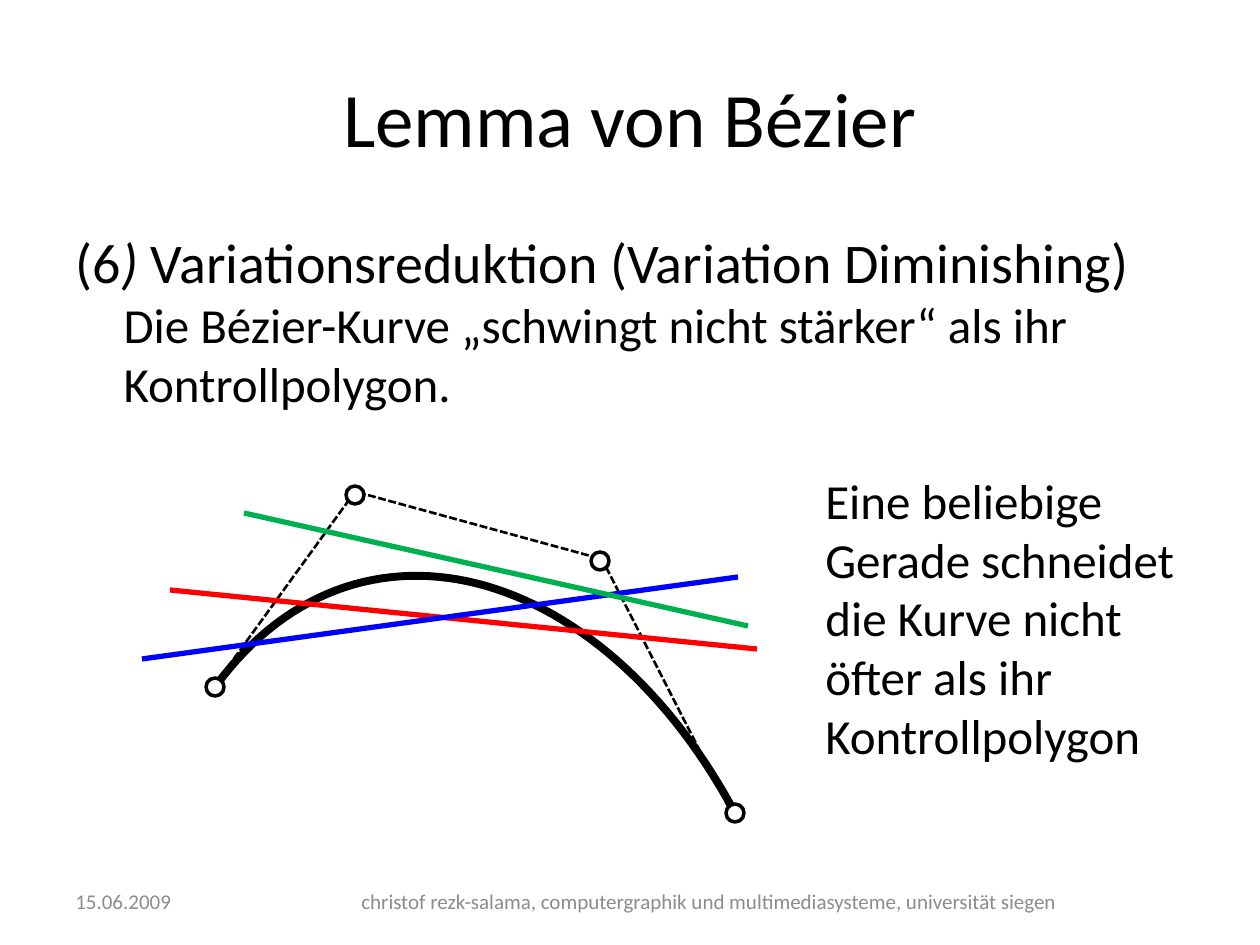
from lxml.etree import SubElement
from pptx import Presentation
from pptx.dml.color import RGBColor
from pptx.enum.dml import MSO_LINE_DASH_STYLE as Dash
from pptx.enum.shapes import MSO_CONNECTOR as Connector, MSO_SHAPE as Shape
from pptx.enum.text import MSO_ANCHOR as Anchor, MSO_AUTO_SIZE as AutoSize, PP_ALIGN as Align
from pptx.oxml.ns import qn
from pptx.util import Emu, Pt

BLACK = RGBColor(0, 0, 0)
WHITE = RGBColor(255, 255, 255)
GRAY = RGBColor(0x8C, 0x8C, 0x8C)
RED = RGBColor(255, 0, 0)
BLUE = RGBColor(0, 0, 255)
GREEN = RGBColor(0, 0xB0, 0x50)
FONT = "Calibri"

CONTROL_POINTS = [(215, 687), (355, 495), (600, 561), (735, 813)]
POLYGON_SIDES = [((209, 693), (349, 500)), ((609, 561), (364, 494)), ((606, 567), (728, 806))]
STRAIGHT_LINES = [
    ((170, 590), (757, 649), RED),
    ((142, 659), (738, 577), BLUE),
    ((244, 513), (748, 626), GREEN),
]
CURVE_STEPS = 60


def px(length):
    return Emu(round(length * 914400 / 126))


def place(shape, left, top, width, height):
    shape.left, shape.top, shape.width, shape.height = map(px, (left, top, width, height))


def style(font, size, color=BLACK):
    font.name, font.size, font.color.rgb = FONT, Pt(size), color


def add_title(page, text):
    title = page.shapes.title
    place(title, 63, 38, 1134, 158)
    title.text_frame.text = text
    style(title.text_frame.paragraphs[0].runs[0].font, 44)


def add_body(page):
    body = page.placeholders[1]
    place(body, 63, 221, 1153, 624)
    body.text_frame.auto_size = AutoSize.NONE
    para = body.text_frame.paragraphs[0]
    properties = para._p.get_or_add_pPr()
    properties.set("marL", str(px(48)))
    properties.set("indent", str(-px(48)))
    SubElement(properties, qn("a:buNone"))
    para.space_before = Pt(0)
    for text, size in (("(6", 32), (") ", 32), ("Variationsreduktion (Variation Diminishing)", 32),
                       ("Die Bézier-Kurve „schwingt nicht stärker“ als ihr Kontrollpolygon.", 28)):
        if size == 28:
            para.add_line_break()
        span = para.add_run()
        span.text = text
        style(span.font, size)
        span.font.italic = text == ") "


def add_text(page, bounds, text, size, color=BLACK, align=Align.LEFT, anchor=Anchor.TOP, wrap=True):
    box = page.shapes.add_textbox(*map(px, bounds))
    frame = box.text_frame
    frame.word_wrap, frame.vertical_anchor = wrap, anchor
    para = frame.paragraphs[0]
    para.text = text
    para.alignment = align
    for span in para.runs:
        style(span.font, size, color)


def add_line(page, start, end, color, width, dash=None):
    line = page.shapes.add_connector(Connector.STRAIGHT, *map(px, start + end))
    line.line.color.rgb, line.line.width = color, Pt(width)
    if dash is not None:
        line.line.dash_style = dash
    SubElement(line._element.spPr, qn("a:effectLst"))


def bezier_point(t):
    weights = ((1 - t) ** 3, 3 * t * (1 - t) ** 2, 3 * t ** 2 * (1 - t), t ** 3)
    return tuple(px(sum(w * point[axis] for w, point in zip(weights, CONTROL_POINTS)))
                 for axis in (0, 1))


def add_curve(page):
    points = [bezier_point(step / CURVE_STEPS) for step in range(CURVE_STEPS + 1)]
    builder = page.shapes.build_freeform(*points[0])
    builder.add_line_segments(points[1:], close=False)
    curve = builder.convert_to_shape()
    curve.shadow.inherit = False
    curve.fill.background()
    curve.line.color.rgb, curve.line.width = BLACK, Pt(4.5)


def add_control_point(page, x, y, diameter=18):
    corner = x - diameter / 2, y - diameter / 2
    circle = page.shapes.add_shape(Shape.OVAL, *map(px, corner + (diameter, diameter)))
    circle.shadow.inherit = False
    circle.fill.solid()
    circle.fill.fore_color.rgb = WHITE
    circle.line.color.rgb, circle.line.width = BLACK, Pt(2)


def main():
    deck = Presentation()
    deck.slide_width, deck.slide_height = px(1260), px(945)
    page = deck.slides.add_slide(deck.slide_layouts[1])
    add_title(page, "Lemma von Bézier")
    add_body(page)
    add_text(page, (63, 876, 242, 50), "15.06.2009", 12, GRAY, anchor=Anchor.MIDDLE)
    add_text(page, (315, 876, 788, 50),
             "christof rezk-salama, computergraphik und multimediasysteme, universität siegen",
             12, GRAY, Align.CENTER, Anchor.MIDDLE)
    for start, end in POLYGON_SIDES:
        add_line(page, start, end, BLACK, 1.5, Dash.SQUARE_DOT)
    add_curve(page)
    for x, y in CONTROL_POINTS:
        add_control_point(page, x, y)
    for start, end, color in STRAIGHT_LINES:
        add_line(page, start, end, color, 3)
    add_text(page, (813, 464, 389, 310),
             "Eine beliebige\nGerade schneidet\ndie Kurve nicht\nöfter als ihr\nKontrollpolygon",
             28, wrap=False)
    deck.save("out.pptx")


if __name__ == "__main__":
    main()
